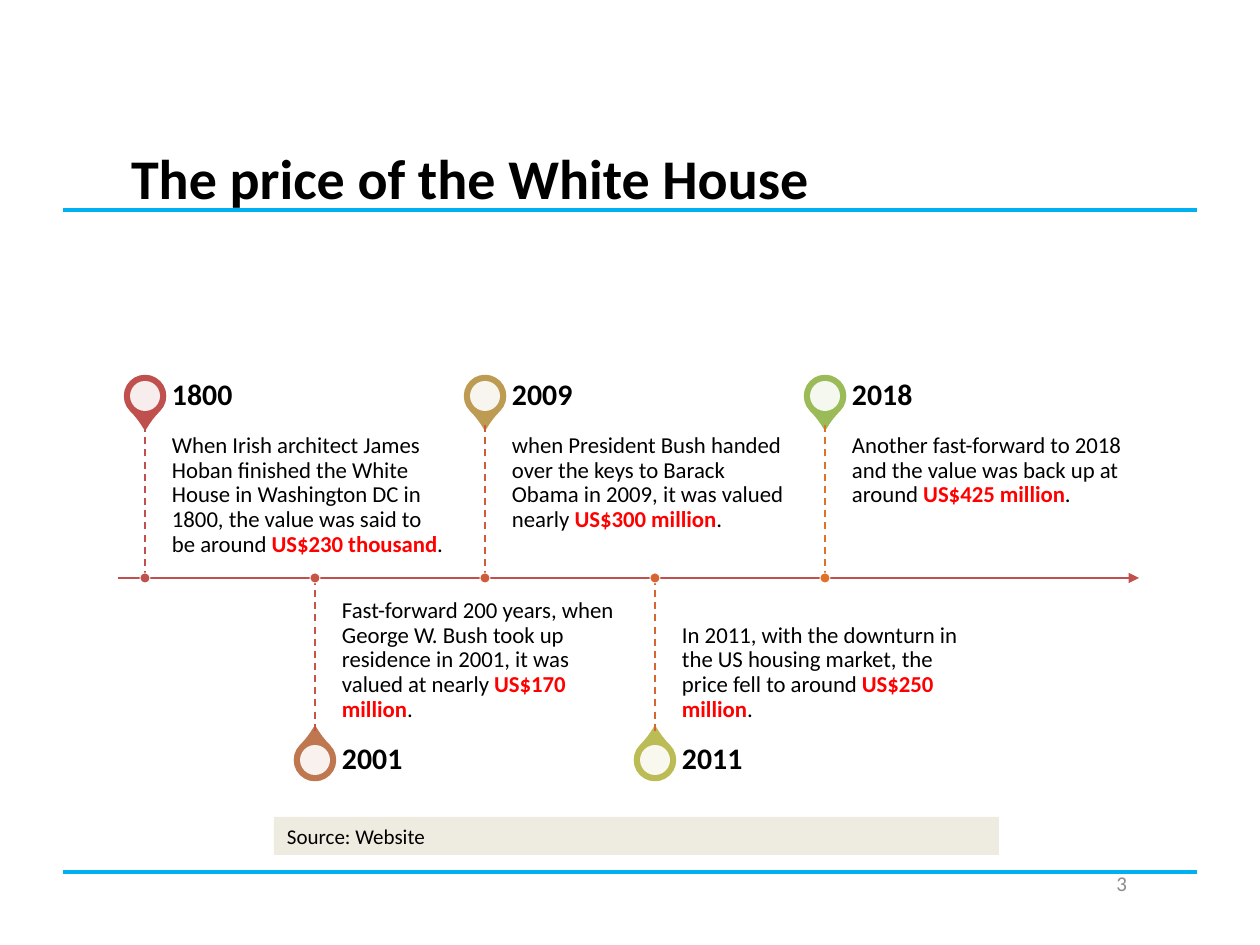
from lxml.etree import SubElement
from pptx import Presentation
from pptx.dml.color import RGBColor
from pptx.enum.dml import MSO_LINE
from pptx.enum.shapes import MSO_CONNECTOR, MSO_SHAPE
from pptx.enum.text import MSO_ANCHOR, PP_ALIGN
from pptx.oxml.ns import qn
from pptx.util import Pt

EMU_PER_PX = 914400 / 126
FONT = "Calibri"
COLORS = {
    "text": "000000",
    "price": "FF0000",
    "rule": "00B0F0",
    "axis": "C0504D",
    "white": "FFFFFF",
    "number": "8C8C8C",
    "source": "EEECE1",
}
AXIS_Y = 578
FIRST_X = 145
STEP_X = 170
PIN_OFFSET = 182
STORY_HEIGHT = 155
YEAR_HEIGHT = 54
TEXT_WIDTH = 284

# year, story, price, pin colour, stem colour
EVENTS = [
    ("1800", "When Irish architect James Hoban finished the White House in Washington DC in 1800, "
     "the value was said to be around ", "US$230 thousand", "C0504D", "C0504D"),
    ("2001", "Fast-forward 200 years, when George W. Bush took up residence in 2001, "
     "it was valued at nearly ", "US$170 million", "BF7750", "C75444"),
    ("2009", "when President Bush handed over the keys to Barack Obama in 2009, "
     "it was valued nearly ", "US$300 million", "BD9B53", "CF5B3A"),
    ("2011", "In 2011, with the downturn in the US housing market, "
     "the price fell to around ", "US$250 million", "BCBC56", "D66531"),
    ("2018", "Another fast-forward to 2018 and the value was back up at around ",
     "US$425 million", "9BBB59", "DE7227"),
]


def px(*lengths):
    return [round(length * EMU_PER_PX) for length in lengths]


def rgb(color):
    return RGBColor.from_string(COLORS.get(color, color))


def write_text(box, *spans, size, color="text", bold=False, align=PP_ALIGN.LEFT,
               anchor=MSO_ANCHOR.MIDDLE, insets=(13, 6, 13, 6), spacing=None):
    """Fill a box with one paragraph; a span is a string or (string, colour, bold)."""
    frame = box.text_frame
    frame.word_wrap = True
    frame.vertical_anchor = anchor
    (frame.margin_left, frame.margin_top,
     frame.margin_right, frame.margin_bottom) = px(*insets)
    para = frame.paragraphs[0]
    para.alignment = align
    if spacing:
        para.line_spacing = spacing
    for span in spans:
        words, span_color, span_bold = (span, color, bold) if isinstance(span, str) else span
        run = para.add_run()
        run.text = words
        run.font.name = FONT
        run.font.size = Pt(size)
        run.font.bold = span_bold
        run.font.color.rgb = rgb(span_color)


def add_text(page, bounds, *spans, **text_format):
    box = page.shapes.add_textbox(*px(*bounds))
    write_text(box, *spans, **text_format)


def add_line(page, start, end, color, width, dashed=False, arrow=False):
    line = page.shapes.add_connector(MSO_CONNECTOR.STRAIGHT, *px(*start, *end))
    line.line.color.rgb = rgb(color)
    line.line.width = Pt(width)
    if dashed:
        line.line.dash_style = MSO_LINE.DASH
    if arrow:
        SubElement(line.line._get_or_add_ln(), qn("a:tailEnd"), type="triangle")
    SubElement(line._element.spPr, qn("a:effectLst"))


def add_shape(page, kind, bounds, fill, line=None, line_width=1):
    shape = page.shapes.add_shape(kind, *px(*bounds))
    shape.shadow.inherit = False
    shape.fill.solid()
    shape.fill.fore_color.rgb = rgb(fill)
    if line:
        shape.line.color.rgb = rgb(line)
        shape.line.width = Pt(line_width)
    else:
        shape.line.fill.background()
    return shape


def around(x, y, size):
    """Bounds of a square centred on a point."""
    return x - size / 2, y - size / 2, size, size


def add_pin(page, x, y, color, rotation):
    drop = add_shape(page, MSO_SHAPE.TEAR, around(x, y, 39), color, color, 2)
    drop.adjustments[0] = 1.15
    drop.rotation = rotation
    hole = add_shape(page, MSO_SHAPE.OVAL, around(x, y, 30), "white")
    fill_color = hole._element.spPr.find(qn("a:solidFill"))[0]
    SubElement(fill_color, qn("a:alpha"), val="90000")


def add_event(page, index, year, story, price, pin_color, stem_color):
    """Place an event above the axis when its index is even, else below."""
    x = FIRST_X + index * STEP_X
    text_x = x + 27
    if index % 2 == 0:
        side, rotation, anchor, insets = -1, 135, MSO_ANCHOR.TOP, (0, 11, 11, 18)
        story_y = AXIS_Y - STORY_HEIGHT
        year_y = story_y - YEAR_HEIGHT
    else:
        side, rotation, anchor, insets = 1, 315, MSO_ANCHOR.BOTTOM, (0, 18, 0, 11)
        story_y = AXIS_Y
        year_y = story_y + STORY_HEIGHT

    add_pin(page, x, AXIS_Y + side * PIN_OFFSET, pin_color, rotation)
    add_text(page, (text_x, story_y, TEXT_WIDTH, STORY_HEIGHT),
             story, (price, "price", True), ".",
             size=13, anchor=anchor, insets=insets, spacing=0.9)
    add_text(page, (text_x, year_y, TEXT_WIDTH, YEAR_HEIGHT), year,
             size=17, bold=True, insets=(0, 0, 15, 0), spacing=0.9)
    add_line(page, (x, AXIS_Y), (x, AXIS_Y + side * STORY_HEIGHT), stem_color, 1, dashed=True)
    add_shape(page, MSO_SHAPE.OVAL, around(x, AXIS_Y, 10), stem_color, "white", 0.5)


def add_title(page, words):
    title = page.shapes.title
    title.left, title.top, title.width, title.height = px(118, 84, 1021, 186)
    write_text(title, words, size=32, bold=True)


def main():
    deck = Presentation()
    deck.slide_width, deck.slide_height = px(1260, 945)
    page = deck.slides.add_slide(deck.slide_layouts.get_by_name("Title Only"))

    for y in (210, 872):
        add_line(page, (63, y), (1197, y), "rule", 2.25)
    add_title(page, "The price of the White House")
    add_text(page, (964, 858, 176, 50), "3", size=12, color="number", align=PP_ALIGN.RIGHT)

    add_line(page, (118, AXIS_Y), (1139, AXIS_Y), "axis", 1.5, arrow=True)
    for index, event in enumerate(EVENTS):
        add_event(page, index, *event)

    source = add_shape(page, MSO_SHAPE.RECTANGLE, (274, 817, 725, 38), "source")
    write_text(source, "Source: Website", size=12)
    deck.save("out.pptx")


if __name__ == "__main__":
    main()
